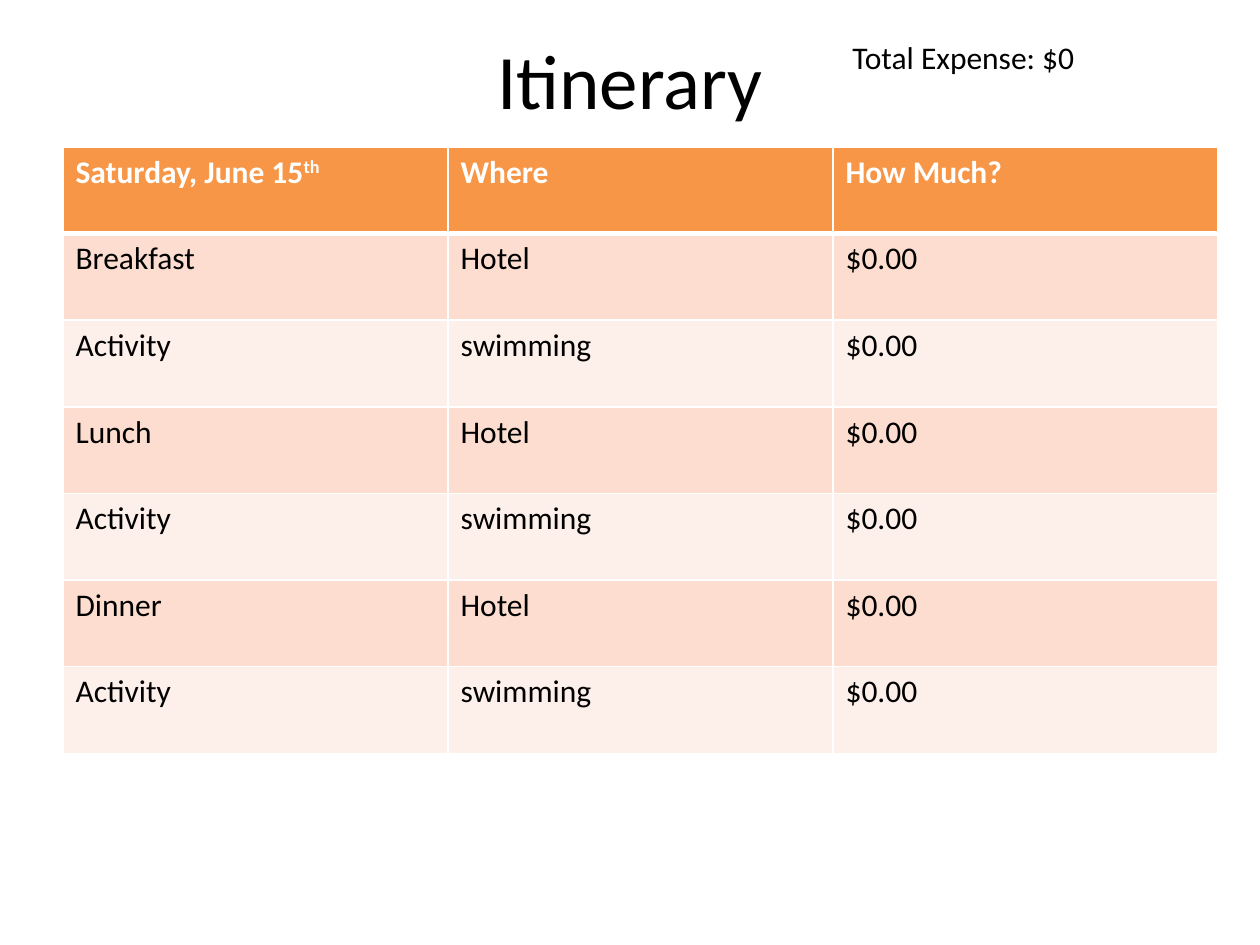
from lxml import etree
from pptx import Presentation
from pptx.dml.color import RGBColor
from pptx.enum import text as t
from pptx.oxml import ns
from pptx.util import Pt

BLACK = RGBColor(0x00, 0x00, 0x00)
WHITE = RGBColor(0xFF, 0xFF, 0xFF)
ORANGE = RGBColor(0xF7, 0x96, 0x46)
PEACH = RGBColor(0xFC, 0xDD, 0xCF)
CREAM = RGBColor(0xFD, 0xEF, 0xE9)


def write(frame, words, size=18, color=BLACK, bold=False, raised=False,
          align=t.PP_ALIGN.LEFT):
    """Add a run to the first paragraph of the frame."""
    para = frame.paragraphs[0]
    para.alignment = align
    run = para.add_run()
    run.text = words
    font = run.font
    font.name, font.size, font.bold = "Calibri", Pt(size), bold
    font.color.rgb = color
    if raised:
        font._element.set("baseline", "30000")


def edge(cell, side, width):
    """Draw a white border on one side (L, R, T or B) of the cell."""
    props = cell._tc.get_or_add_tcPr()
    line = etree.SubElement(props, ns.qn("a:ln" + side), w=str(Pt(width)))
    fill = etree.SubElement(line, ns.qn("a:solidFill"))
    etree.SubElement(fill, ns.qn("a:srgbClr"), val=str(WHITE))


deck = Presentation()
deck.slide_width, deck.slide_height = Pt(720), Pt(540)
slide = deck.slides.add_slide(deck.slide_layouts[6])

title = slide.shapes.add_textbox(Pt(36), Pt(0), Pt(648), Pt(90)).text_frame
title.word_wrap = True
title.vertical_anchor = t.MSO_ANCHOR.MIDDLE
write(title, "Itinerary", size=44, align=t.PP_ALIGN.CENTER)

total = slide.shapes.add_textbox(Pt(480), Pt(18), Pt(222), Pt(29)).text_frame
total.word_wrap = True
total.auto_size = t.MSO_AUTO_SIZE.SHAPE_TO_FIT_TEXT
write(total, "Total Expense: $0")

heads = ["Saturday, June 15", "Where", "How Much?"]
rows = [heads]
for meal in ["Breakfast", "Lunch", "Dinner"]:
    rows.append([meal, "Hotel", "$0.00"])
    rows.append(["Activity", "swimming", "$0.00"])

table = slide.shapes.add_table(len(rows), len(heads), Pt(36), Pt(84),
                               Pt(660), Pt(346.5)).table
for col in table.columns:
    col.width = Pt(220)
for r, row in enumerate(rows):
    table.rows[r].height = Pt(49.5)
    head = r == 0
    for c, words in enumerate(row):
        cell = table.cell(r, c)
        for side in "LRTB":
            thick = (head and side == "B") or (r == 1 and side == "T")
            edge(cell, side, 3 if thick else 1)
        cell.fill.solid()
        cell.fill.fore_color.rgb = ORANGE if head else PEACH if r % 2 else CREAM
        write(cell.text_frame, words, color=WHITE if head else BLACK, bold=head)
write(table.cell(0, 0).text_frame, "th", color=WHITE, bold=True, raised=True)

deck.save("out.pptx")
